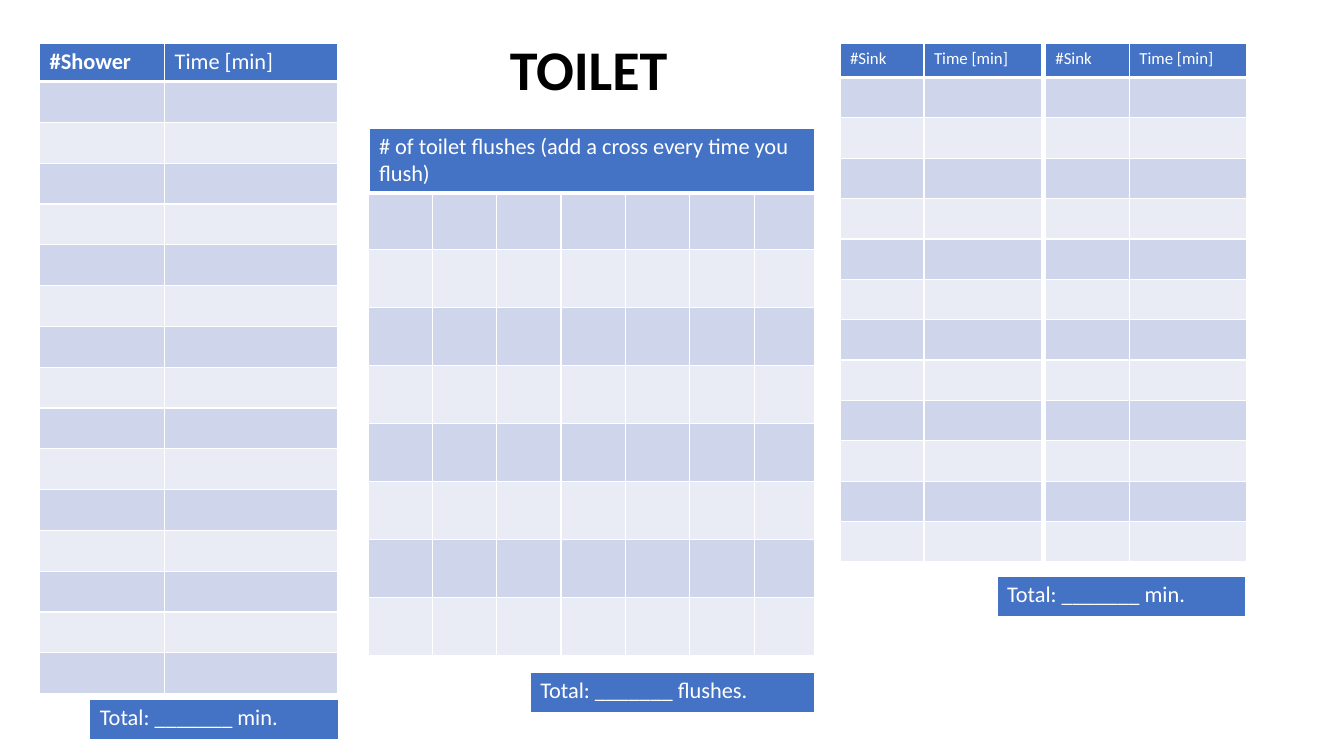
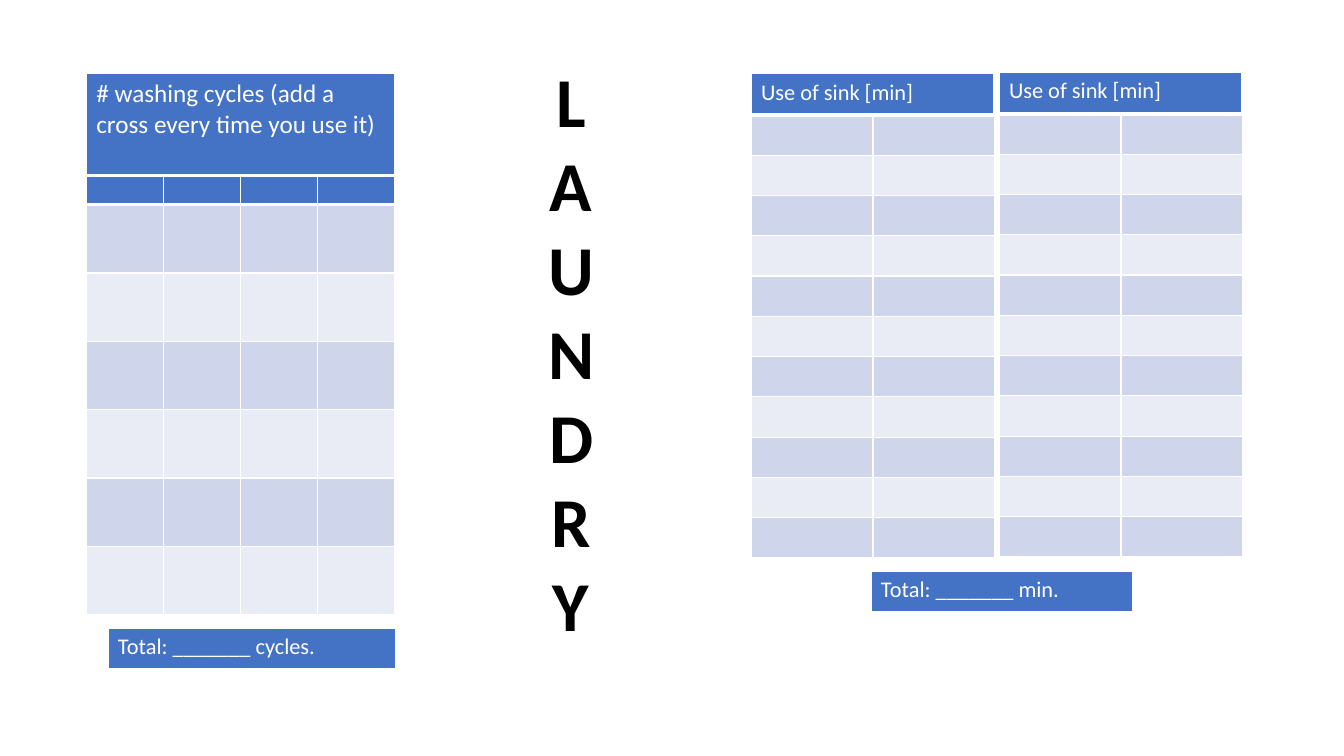
from lxml.etree import SubElement
from pptx import Presentation
from pptx.dml.color import RGBColor
from pptx.enum.text import MSO_ANCHOR, MSO_AUTO_SIZE, PP_ALIGN
from pptx.oxml.ns import qn
from pptx.util import Inches, Pt

WIDE, HIGH = Inches(13.333), Inches(7.5)
BLUE = RGBColor(0x44, 0x72, 0xC4)
DARK = RGBColor(0xCF, 0xD5, 0xEA)
PALE = RGBColor(0xE9, 0xEB, 0xF5)
WHITE = RGBColor(0xFF, 0xFF, 0xFF)
BLACK = RGBColor(0, 0, 0)
FONT = "Calibri"
BAR = 5.47


def across(share):
    """Turn a percentage of the slide's width into a length."""
    return int(WIDE * share / 100)


def down(share):
    """Turn a percentage of the slide's height into a length."""
    return int(HIGH * share / 100)


def apply(item, form):
    """Set each attribute of the item from the format values."""
    for name, value in form.items():
        setattr(item, name, value)


def style(font, size, color, bold=False):
    """Format a font of the deck."""
    apply(font, {"name": FONT, "size": Pt(size), "bold": bold})
    font.color.rgb = color


def edge(cell, base):
    """Draw white borders round a cell, with its own bottom width."""
    props = cell._tc.get_or_add_tcPr()
    for side, width in (("L", 1), ("R", 1), ("T", 1), ("B", base)):
        line = SubElement(props, qn("a:ln" + side), w=str(Pt(width)))
        fill = SubElement(line, qn("a:solidFill"))
        SubElement(fill, qn("a:srgbClr"), val=str(WHITE))


def paint(cell, color, base=1):
    """Give a cell its borders and fill."""
    edge(cell, base)
    cell.fill.solid()
    cell.fill.fore_color.rgb = color


def label(cell, text, size, bold):
    """Write white text in a cell, or clear the margins of an empty one."""
    if text:
        cell.text = text
        style(cell.text_frame.paragraphs[0].runs[0].font, size, WHITE, bold)
    else:
        apply(cell, {"margin_top": 0, "margin_bottom": 0})


def grid(slide, spot, wide, heads, head, rows=0, body=0, cols=None,
         size=16, lead=False):
    """Add a table with a blue head row and banded empty rows."""
    cols = cols or [1] * len(heads)
    left, top = spot
    frame = slide.shapes.add_table(
        rows + 1, len(cols), across(left), down(top), across(wide),
        down(head + rows * body))
    table = frame.table
    for col, part in zip(table.columns, cols):
        col.width = across(wide * part / sum(cols))
    for num, row in enumerate(table.rows):
        row.height = down(body if num else head)
        for pos, cell in enumerate(row.cells):
            if num:
                paint(cell, DARK if num % 2 else PALE)
                label(cell, "", size, False)
            else:
                paint(cell, BLUE, 3)
                label(cell, heads[pos], size, lead and pos == 0)


def bar(slide, spot, wide, text, high=BAR, size=16):
    """Add a blue one-cell table with a line of text."""
    grid(slide, spot, wide, [text], high, size=size)


def total(slide, spot, wide, unit):
    """Add a bar to fill in a total."""
    bar(slide, spot, wide, f"Total: _______ {unit}.")


def page(deck, text, spot, wide, high, size):
    """Add a slide with a bold centred title."""
    slide = deck.slides.add_slide(deck.slide_layouts[5])
    title = slide.shapes.title
    left, top = spot
    apply(title, {"left": across(left), "top": down(top),
                  "width": across(wide), "height": down(high)})
    frame = title.text_frame
    frame.text = text
    apply(frame, {"word_wrap": True, "auto_size": MSO_AUTO_SIZE.NONE,
                  "vertical_anchor": MSO_ANCHOR.TOP})
    for para in frame.paragraphs:
        para.alignment = PP_ALIGN.CENTER
        style(para.runs[0].font, size, BLACK, True)
    return slide


def bath(deck):
    """Build the slide for shower, toilet and sink."""
    slide = page(deck, "TOILET", (28.05, 3.87), 31.5, 10.27, 40)
    grid(slide, (2.95, 5.73), 22.2, ["#Shower", "Time [min]"], 5.07,
         15, 5.4, [1.24, 1.72], lead=True)
    total(slide, (6.68, 92.53), 18.53, "min")
    grid(slide, (27.38, 17.73), 33.23, [""] * 7, 7.6, 8, 7.67,
         [16] * 6 + [15])
    bar(slide, (27.45, 16.93), 33.15,
        "# of toilet flushes (add a cross every time you flush)", 8.4)
    total(slide, (39.45, 88.93), 21.15, "flushes")
    for left in (62.5, 77.78):
        grid(slide, (left, 5.73), 15, ["#Sink", "Time [min]"], 4.53,
             12, 5.34, [5, 7], size=12)
    total(slide, (74.18, 76.27), 18.53, "min")


def wash(deck):
    """Build the slide for laundry."""
    slide = page(deck, "\n".join("LAUNDRY"), (33.98, 6.93), 17.03, 79.87, 50)
    grid(slide, (6.45, 18), 22.88, [""] * 4, 9.07, 6, 9.04)
    bar(slide, (6.42, 9.73), 22.95,
        "# washing cycles (add a cross every time you use it)", 13.5, 18)
    for left, top in ((55.88, 9.87), (74.33, 9.73)):
        grid(slide, (left, top), 18.15, [""] * 2, 5.33, 11, 5.33)
        bar(slide, (left, top - 0.13), 18.08, "Use of sink [min]")
    total(slide, (64.8, 75.6), 19.5, "min")
    total(slide, (8.03, 83.07), 21.38, "cycles")


def main():
    """Build and save the deck."""
    deck = Presentation()
    apply(deck, {"slide_width": WIDE, "slide_height": HIGH})
    bath(deck)
    wash(deck)
    deck.save("out.pptx")


if __name__ == "__main__":
    main()
